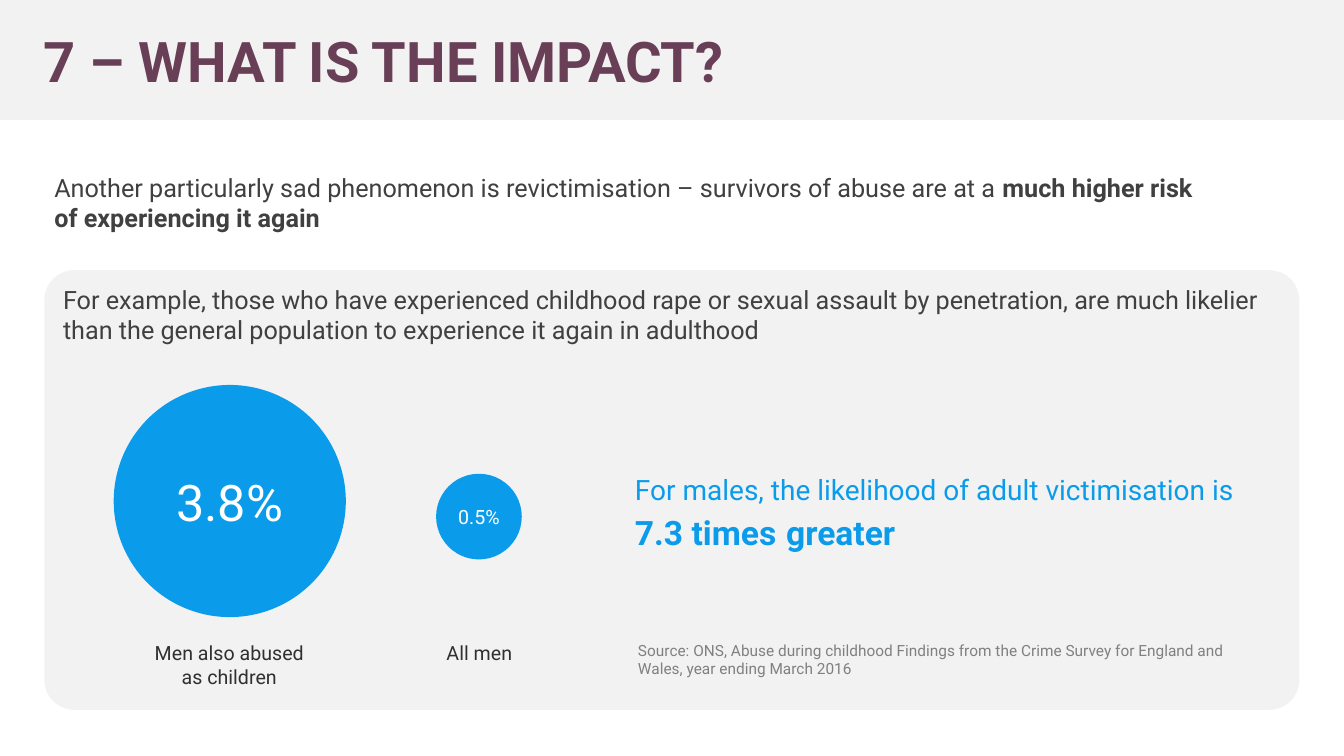
from pptx import Presentation
from pptx.dml.color import RGBColor
from pptx.enum.shapes import MSO_SHAPE
from pptx.enum.text import MSO_ANCHOR, PP_ALIGN
from pptx.util import Pt

COLORS = {
    "panel": "F2F2F2",
    "plum": "683F56",
    "blue": "0B9BEB",
    "body": "404040",
    "label": "303030",
    "source": "808080",
    "white": "FFFFFF",
}

deck = Presentation()
deck.slide_width, deck.slide_height = Pt(960), Pt(540)
slide = deck.slides.add_slide(deck.slide_layouts[6])


def add_block(kind, left, top, width, height, fill):
    block = slide.shapes.add_shape(kind, Pt(left), Pt(top), Pt(width), Pt(height))
    block.shadow.inherit = False
    block.fill.solid()
    block.fill.fore_color.rgb = RGBColor.from_string(COLORS[fill])
    block.line.fill.background()
    return block


def write(shape, runs, size, color, align=PP_ALIGN.LEFT, anchor=MSO_ANCHOR.TOP):
    """Each run is (text, bold, own size or None)."""
    frame = shape.text_frame
    frame.word_wrap = True
    frame.vertical_anchor = anchor
    paragraph = frame.paragraphs[0]
    paragraph.alignment = align
    paragraph.font.name = "Roboto"
    paragraph.font.size = Pt(size)
    paragraph.font.color.rgb = RGBColor.from_string(COLORS[color])
    for text, bold, own_size in runs:
        run = paragraph.add_run()
        run.text = text
        run.font.bold = bold
        if own_size:
            run.font.size = Pt(own_size)


# Example panel
example = add_block(MSO_SHAPE.ROUNDED_RECTANGLE, 31.7, 193, 896.4, 314, "panel")
example.adjustments[0] = 0.068
write(example, [("For example, those who have experienced childhood rape or sexual assault "
                 "by penetration, are much likelier than the general population to "
                 "experience it again in adulthood", False, None)], 18, "body")

# Title band
title = add_block(MSO_SHAPE.RECTANGLE, 0, 0, 960, 85.7, "panel")
title.text_frame.margin_left = Pt(31)
write(title, [("7 – WHAT IS THE IMPACT?", True, None)], 40, "plum",
      anchor=MSO_ANCHOR.MIDDLE)

# Circles, sized by share: left, top, diameter, side inset
for share, left, top, diameter, inset, size in [
    ("3.8%", 81.2, 275, 165.8, 7.2, 36),
    ("0.5%", 311.5, 338.4, 61.2, 0, 14),
]:
    circle = add_block(MSO_SHAPE.OVAL, left, top, diameter, diameter, "blue")
    circle.text_frame.margin_left = circle.text_frame.margin_right = Pt(inset)
    write(circle, [(share, False, None)], size, "white",
          PP_ALIGN.CENTER, MSO_ANCHOR.MIDDLE)

# Introduction, finding, circle labels and source
for left, top, width, height, runs, size, color, align in [
    (31.7, 119.5, 830, 72.7,
     [("Another particularly sad phenomenon is revictimisation – survivors of abuse "
       "are at a ", False, None),
      ("much higher risk of experiencing it again", True, None)],
     18, "body", PP_ALIGN.LEFT),
    (446.4, 334, 447.1, 65.5,
     [("For males, the likelihood of adult victimisation is ", False, None),
      ("7.3 times", True, 24), (" ", True, 28), ("greater", True, 24)],
     20, "blue", PP_ALIGN.LEFT),
    (97.2, 454.3, 133.2, 41, [("Men also abused as children", False, None)],
     14, "label", PP_ALIGN.CENTER),
    (275.8, 454.3, 133.2, 24.5, [("All men", False, None)],
     14, "label", PP_ALIGN.CENTER),
    (448.6, 454.3, 461.5, 33.8,
     [("Source: ONS, Abuse during childhood Findings from the Crime Survey for "
       "England and Wales, year ending March 2016", False, None)],
     11, "source", PP_ALIGN.LEFT),
]:
    passage = slide.shapes.add_textbox(Pt(left), Pt(top), Pt(width), Pt(height))
    write(passage, runs, size, color, align)

deck.save("out.pptx")
